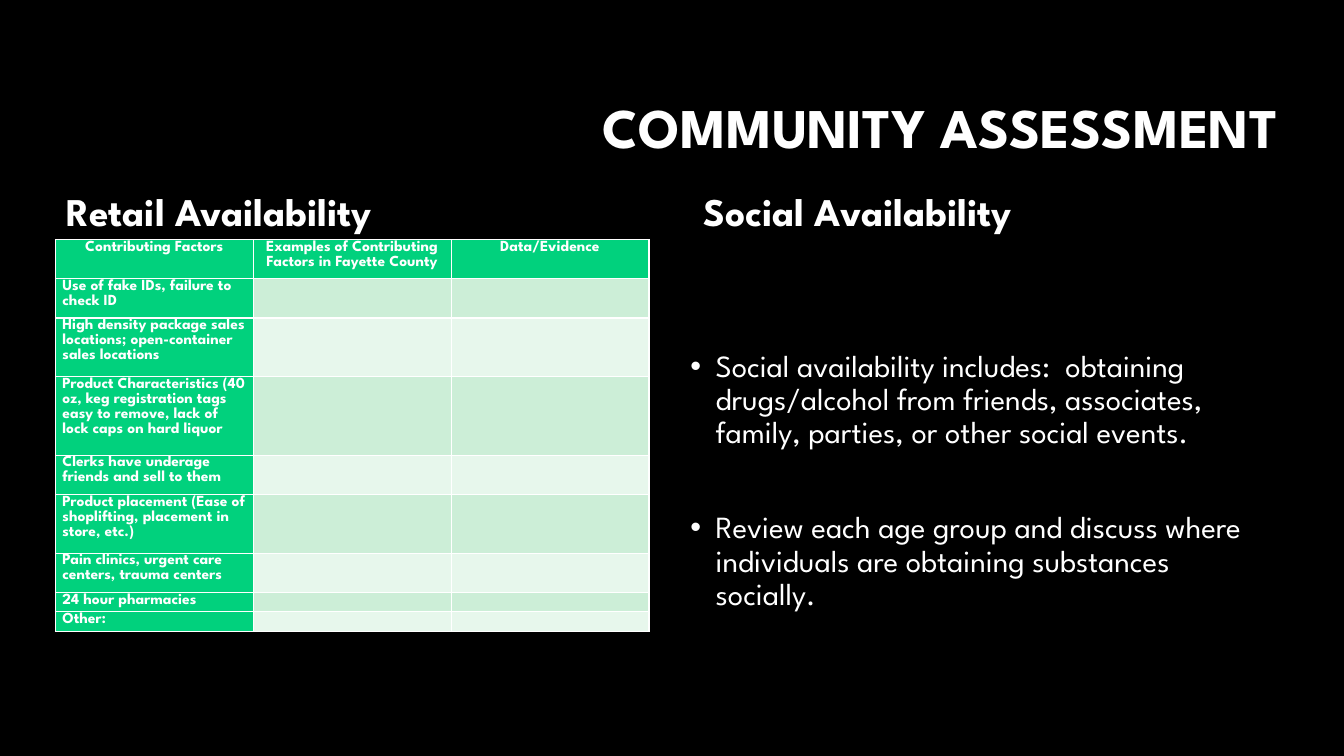
from dataclasses import dataclass

from lxml import etree
from pptx import Presentation
from pptx.dml.color import RGBColor
from pptx.enum import text
from pptx.oxml import ns
from pptx.util import Pt


@dataclass(frozen=True)
class Theme:
    font: str = "League Spartan"
    background: RGBColor = RGBColor(0x00, 0x00, 0x00)
    ink: RGBColor = RGBColor(0xFF, 0xFF, 0xFF)
    accent: RGBColor = RGBColor(0x01, 0xD1, 0x7D)
    bands: tuple = (RGBColor(0xCC, 0xEE, 0xD7), RGBColor(0xE7, 0xF7, 0xEC))
    title_size: int = 40
    heading_size: int = 28
    list_size: int = 22
    table_size: int = 11


THEME = Theme()
COLUMN_WIDTH = 424
ROW_LINE = 14

HEADER = ("Contributing Factors",
          "Examples of Contributing Factors in Fayette County",
          "Data/Evidence")
HEADER_LINES = 2
# Each factor with the number of text lines its row holds
FACTORS = (
    ("Use of fake IDs, failure to check ID", 2),
    ("High density package sales locations; open-container sales locations", 3),
    ("Product Characteristics (40 oz, keg registration tags easy to remove, "
     "lack of lock caps on hard liquor", 4),
    ("Clerks have underage friends and sell to them", 2),
    ("Product placement (Ease of shoplifting, placement in store, etc.)", 3),
    ("Pain clinics, urgent care centers, trauma centers", 2),
    ("24 hour pharmacies", 1),
    ("Other:", 1),
)
SOCIAL_POINTS = (
    "Social availability includes:  obtaining drugs/alcohol from friends, "
    "associates, family, parties, or other social events.",
    "Review each age group and discuss where individuals are obtaining "
    "substances socially.",
)


def style(paragraph, size, bold, spacing, align=text.PP_ALIGN.LEFT, before=0):
    paragraph.alignment = align
    paragraph.line_spacing = spacing
    paragraph.space_before = Pt(before)
    font = paragraph.font
    font.name, font.size, font.bold = THEME.font, Pt(size), bold
    font.color.rgb = THEME.ink


def place(holder, left, top, width, height, anchor):
    holder.left, holder.top = Pt(left), Pt(top)
    holder.width, holder.height = Pt(width), Pt(height)
    frame = holder.text_frame
    frame.word_wrap = True
    frame.auto_size = text.MSO_AUTO_SIZE.NONE
    frame.vertical_anchor = anchor
    return frame


def fill_title(holder, wording):
    frame = place(holder, 40, 51, 880, 84, text.MSO_ANCHOR.MIDDLE)
    frame.text = wording
    style(frame.paragraphs[0], THEME.title_size, True, 0.9,
          text.PP_ALIGN.RIGHT)


def fill_heading(holder, wording, left):
    frame = place(holder, left, 135, COLUMN_WIDTH, 36, text.MSO_ANCHOR.BOTTOM)
    frame.text = wording
    style(frame.paragraphs[0], THEME.heading_size, True, 0.8)


def add_bullet(paragraph):
    properties = paragraph._p.get_or_add_pPr()
    properties.set("marL", str(Pt(18)))
    properties.set("indent", str(-Pt(18)))
    etree.SubElement(properties, ns.qn("a:buFont"), typeface="Arial")
    etree.SubElement(properties, ns.qn("a:buChar"), char="•")


def fill_list(holder, points):
    frame = place(holder, 486, 247, 420, 243, text.MSO_ANCHOR.TOP)
    frame.text = "\n".join(points)
    for index, paragraph in enumerate(frame.paragraphs):
        add_bullet(paragraph)
        style(paragraph, THEME.list_size, False, 0.9,
              before=44 if index else 0)


def fill_cell(cell, wording, colour, align):
    cell.fill.solid()
    cell.fill.fore_color.rgb = colour
    cell.margin_left = cell.margin_right = Pt(5)
    cell.margin_top = cell.margin_bottom = 0
    cell.text = wording
    paragraph = cell.text_frame.paragraphs[0]
    style(paragraph, THEME.table_size, True, 1.07, align)
    if not wording:
        # An empty cell takes its line height from the end mark
        etree.SubElement(paragraph._p, ns.qn("a:endParaRPr"),
                         sz=str(THEME.table_size * 100))


def add_factor_table(slide):
    rows = [(HEADER, HEADER_LINES)]
    rows += [((factor, "", ""), lines) for factor, lines in FACTORS]
    height = ROW_LINE * sum(lines for _, lines in rows)
    table = slide.shapes.add_table(len(rows), len(HEADER), Pt(39.6), Pt(171.2),
                                   Pt(COLUMN_WIDTH), Pt(height)).table
    table.first_col = True
    for r, (wordings, lines) in enumerate(rows):
        table.rows[r].height = Pt(ROW_LINE * lines)
        align = text.PP_ALIGN.LEFT if r else text.PP_ALIGN.CENTER
        for c, wording in enumerate(wordings):
            is_label = r == 0 or c == 0
            colour = THEME.accent if is_label else THEME.bands[(r - 1) % 2]
            fill_cell(table.cell(r, c), wording, colour, align)


def main():
    deck = Presentation()
    deck.slide_width, deck.slide_height = Pt(960), Pt(540)
    slide = deck.slides.add_slide(deck.slide_layouts.get_by_name("Comparison"))
    slide.background.fill.solid()
    slide.background.fill.fore_color.rgb = THEME.background

    title, retail, retail_body, social, social_body = slide.placeholders
    fill_title(title, "COMMUNITY ASSESSMENT")
    fill_heading(retail, "Retail Availability", 40)
    retail_body.element.getparent().remove(retail_body.element)
    add_factor_table(slide)
    fill_heading(social, "Social Availability", 495.6)
    fill_list(social_body, SOCIAL_POINTS)
    deck.save("out.pptx")


if __name__ == "__main__":
    main()
